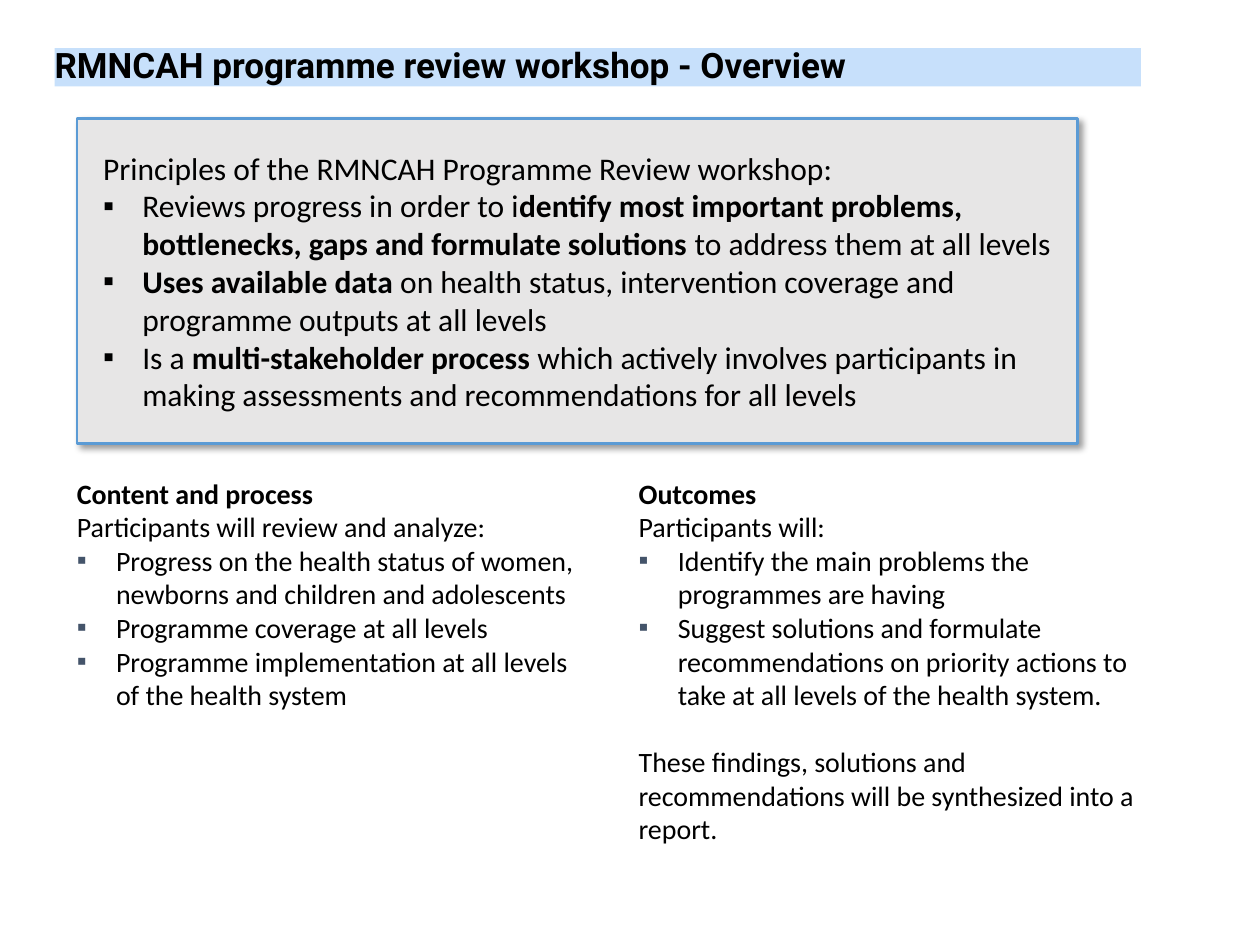
from lxml.etree import SubElement
from pptx import Presentation
from pptx.dml.color import RGBColor
from pptx.enum.shapes import MSO_SHAPE
from pptx.enum.text import MSO_ANCHOR, PP_ALIGN
from pptx.oxml.ns import qn
from pptx.util import Cm, Pt

COLOURS = {"text": "000000", "title": "C7E0FB", "panel": "E7E6E6",
           "border": "5B9BD5", "bullet": "44546A", "shadow": "000000"}
INDENT = Cm(0.79)

# Each paragraph is (kind, spans); each span is (text, bold)
PRINCIPLES = [
    ("plain", [("Principles of the RMNCAH Programme Review workshop:", False)]),
    ("bullet", [("Reviews progress in order to i", False),
                ("dentify most important problems, bottlenecks, gaps and formulate solutions ", True),
                ("to address them at all levels", False)]),
    ("bullet", [("Uses available data", True),
                (" on health status, intervention coverage and programme outputs at all levels", False)]),
    ("bullet", [("Is a ", False), ("multi-stakeholder process ", True),
                ("which actively involves participants in making assessments and "
                 "recommendations for all levels", False)]),
]
CONTENT = [
    ("plain", [("Content and process", True)]),
    ("plain", [("Participants will review and analyze:", False)]),
    ("bullet", [("Progress on the health status of women, newborns and children and adolescents", False)]),
    ("bullet", [("Programme coverage at all levels", False)]),
    ("bullet", [("Programme implementation at all levels of the health system", False)]),
]
OUTCOMES = [
    ("plain", [("Outcomes", True)]),
    ("plain", [("Participants will:", False)]),
    ("bullet", [("Identify the main problems the programmes are having", False)]),
    ("bullet", [("Suggest solutions and formulate recommendations on priority actions "
                 "to take at all levels of the health system.", False)]),
    ("closing", [("These findings, solutions and recommendations will be "
                  "synthesized into a report.", False)]),
]


def colour(name):
    return RGBColor.from_string(COLOURS[name])


def set_values(target, values):
    for name, value in values.items():
        setattr(target, name, value)


def set_frame(frame, anchor=MSO_ANCHOR.TOP):
    set_values(frame, {"word_wrap": True, "vertical_anchor": anchor,
                       "margin_left": 0, "margin_right": 0,
                       "margin_top": 0, "margin_bottom": 0})


def add_span(para, text, bold, size, font="Calibri"):
    span = para.add_run()
    span.text = text
    set_values(span.font, {"name": font, "size": Pt(size), "bold": bold})
    span.font.color.rgb = colour("text")


def add_bullet(para, bullet_colour):
    properties = para._p.get_or_add_pPr()
    properties.set("marL", str(INDENT))
    properties.set("indent", str(-INDENT))
    fill = SubElement(properties, qn("a:buClr"))
    SubElement(fill, qn("a:srgbClr"), val=COLOURS[bullet_colour])
    SubElement(properties, qn("a:buFont"), typeface="Arial")
    SubElement(properties, qn("a:buChar"), char="▪")


def add_text(page, box, paragraphs, size, bullet_colour, anchor=MSO_ANCHOR.TOP):
    frame = page.shapes.add_textbox(*box).text_frame
    set_frame(frame, anchor)
    for index, (kind, spans) in enumerate(paragraphs):
        para = frame.add_paragraph() if index else frame.paragraphs[0]
        if kind == "closing":
            para.space_before = Pt(size * 1.2)
        if kind == "bullet":
            add_bullet(para, bullet_colour)
        for text, bold in spans:
            add_span(para, text, bold, size)


def add_shadow(shape):
    effects = SubElement(shape._element.spPr, qn("a:effectLst"))
    shadow = SubElement(effects, qn("a:outerShdw"), blurRad=str(Pt(4)), dist=str(Pt(3)),
                        dir=str(45 * 60000), algn="tl", rotWithShape="0")
    tint = SubElement(shadow, qn("a:srgbClr"), val=COLOURS["shadow"])
    SubElement(tint, qn("a:alpha"), val="40000")


def add_title(page, box, text):
    title = page.shapes.title
    set_values(title, dict(zip(("left", "top", "width", "height"), box)))
    title.fill.solid()
    title.fill.fore_color.rgb = colour("title")
    set_frame(title.text_frame)
    para = title.text_frame.paragraphs[0]
    set_values(para, {"alignment": PP_ALIGN.LEFT, "line_spacing": 0.9})
    add_span(para, text, True, 20, "Roboto")


def add_principles(page, box):
    left, top, width, height = box
    panel = page.shapes.add_shape(MSO_SHAPE.RECTANGLE, *box)
    panel.fill.solid()
    panel.fill.fore_color.rgb = colour("panel")
    panel.line.color.rgb = colour("border")
    panel.line.width = Pt(1.5)
    add_shadow(panel)
    # Text is centred vertically in the panel
    padding = Cm(0.53)
    add_text(page, (left + padding, top, width - 2 * padding, height),
             PRINCIPLES, 18, "text", MSO_ANCHOR.MIDDLE)


def add_columns(page, box):
    left, top, width, height = box
    gap = Cm(0.9)
    column = (width - gap) // 2
    for index, paragraphs in enumerate((CONTENT, OUTCOMES)):
        add_text(page, (left + index * (column + gap), top, column, height),
                 paragraphs, 16, "bullet")


def main():
    deck = Presentation()
    set_values(deck, {"slide_width": Cm(25.4), "slide_height": Cm(19.05)})
    page = deck.slides.add_slide(deck.slide_layouts[5])
    add_title(page, (Cm(1.1), Cm(0.97), Cm(21.9), Cm(0.77)),
              "RMNCAH programme review workshop - Overview")
    add_principles(page, (Cm(1.55), Cm(2.39), Cm(20.17), Cm(6.55)))
    add_columns(page, (Cm(1.55), Cm(9.6), Cm(21.75), Cm(7.5)))
    deck.save("out.pptx")


if __name__ == "__main__":
    main()
